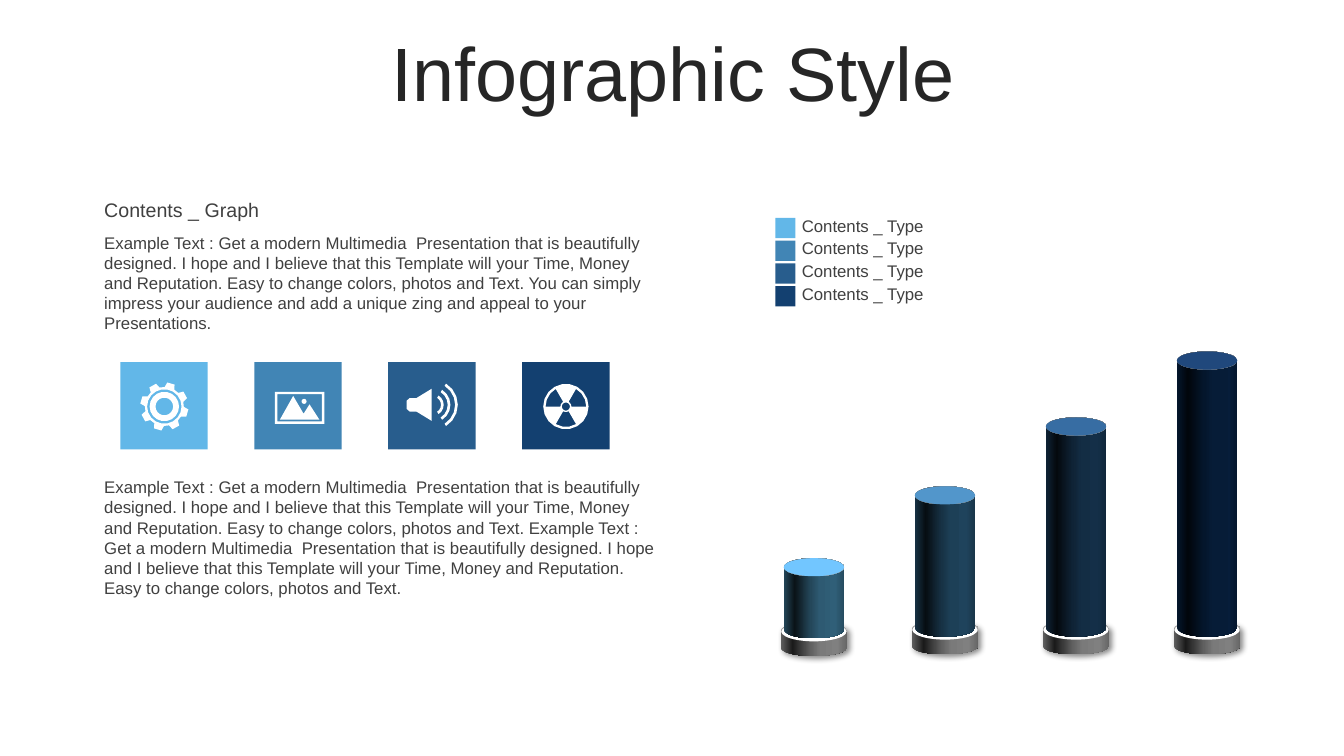
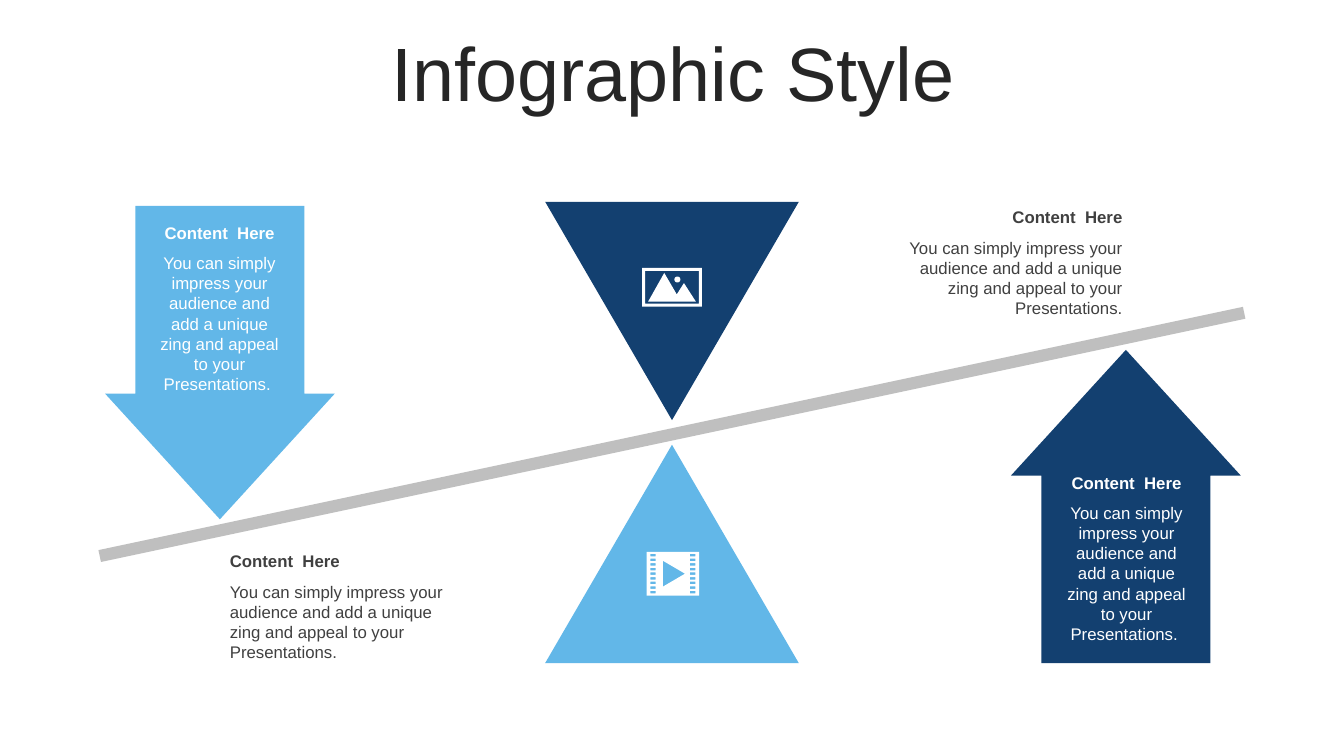
from collections.abc import Callable
from dataclasses import dataclass
from math import cos, radians, sin
from typing import Any, NamedTuple

from lxml import etree
from pptx import Presentation
from pptx.dml.color import RGBColor
from pptx.enum.shapes import MSO_SHAPE
from pptx.enum.text import MSO_ANCHOR, MSO_AUTO_SIZE, PP_ALIGN
from pptx.oxml.ns import qn
from pptx.util import Emu, Inches, Pt

RECT, OVAL, CAN = MSO_SHAPE.RECTANGLE, MSO_SHAPE.OVAL, MSO_SHAPE.CAN
TRIANGLE, DOWN_ARROW = MSO_SHAPE.ISOSCELES_TRIANGLE, MSO_SHAPE.DOWN_ARROW
LEFT, CENTER, RIGHT = PP_ALIGN.LEFT, PP_ALIGN.CENTER, PP_ALIGN.RIGHT
TOP, MIDDLE = MSO_ANCHOR.TOP, MSO_ANCHOR.MIDDLE
NO_FIT = MSO_AUTO_SIZE.NONE

WIDTH, HEIGHT = Inches(13.333), Inches(7.5)
GRID_COLUMNS = 160
UNIT = WIDTH / GRID_COLUMNS

Point = tuple[float, float]
Contour = list[Point]


@dataclass(frozen=True)
class Theme:
    font: str = "Arial"
    title: str = "262626"
    text: str = "404040"
    white: str = "FFFFFF"
    beam: str = "BFBFBF"
    base: str = "808080"
    blues: tuple[str, ...] = ("62B7E8", "4185B5", "285D8D", "134070")
    title_size: int = 54
    heading_size: int = 14
    body_size: int = 12


THEME = Theme()


class Box(NamedTuple):
    x: float
    y: float
    w: float
    h: float


class Column(NamedTuple):
    top: float
    foot: float
    lid: str
    body: str


class Tile(NamedTuple):
    icon: Callable[[float, float], list[Contour]]
    dx: float
    dy: float


class Caption(NamedTuple):
    x: float
    y: float
    w: float
    gap: float
    align: Any
    color: str
    text: str


TITLE = "Infographic Style"
TITLE_BOX = Box(4.2, 4.4, 151.9, 9.5)
PITCH = ("Example Text : Get a modern Multimedia  Presentation that is beautifully designed. "
         "I hope and I believe that this Template will your Time, Money and Reputation. "
         "Easy to change colors, photos and Text.")
APPEAL = "You can simply impress your audience and add a unique zing and appeal to your Presentations."
COLUMNS = (
    Column(66.45, 78.1, "72C6FF", "305F78"),
    Column(57.9, 77.9, "5296CB", "1F435C"),
    Column(49.7, 77.9, "376DA3", "142F48"),
    Column(41.85, 77.9, "20487C", "061D3A"),
)


def emu(n: float) -> Emu:
    return Emu(round(n * UNIT))


def place(box: Box) -> tuple[Emu, ...]:
    return tuple(emu(n) for n in box)


def apply(target: Any, values: dict[str, Any]) -> None:
    for name, value in values.items():
        setattr(target, name, value)


def paint(sp: Any, color: str) -> None:
    sp.shadow.inherit = False
    sp.fill.solid()
    sp.fill.fore_color.rgb = RGBColor.from_string(color)
    sp.line.fill.background()


def add_preset(s: Any, kind: Any, box: Box, color: str, rotation: float = 0,
               adjust: tuple[float, ...] = ()) -> Any:
    sp = s.shapes.add_shape(kind, *place(box))
    paint(sp, color)
    sp.rotation = rotation
    for i, value in enumerate(adjust):
        sp.adjustments[i] = value
    return sp


def add_outline(s: Any, contours: list[Contour], color: str) -> None:
    first, *rest = [[(emu(x), emu(y)) for x, y in c] for c in contours]
    builder = s.shapes.build_freeform(*first[0])
    builder.add_line_segments(first[1:])
    for c in rest:
        builder.move_to(*c[0])
        builder.add_line_segments(c[1:])
    paint(builder.convert_to_shape(), color)


def write(tf: Any, text: str, size: int, color: str, frame: dict[str, Any],
          paragraph: dict[str, Any], bold: bool = False) -> None:
    apply(tf, {"word_wrap": True, "auto_size": NO_FIT, **frame})
    p = tf.paragraphs[0]
    apply(p, paragraph)
    r = p.add_run()
    r.text = text
    apply(r.font, {"name": THEME.font, "size": Pt(size), "bold": bold})
    r.font.color.rgb = RGBColor.from_string(color)


def add_text(s: Any, box: Box, text: str, size: int = THEME.body_size,
             color: str = THEME.text, align: Any = LEFT, anchor: Any = TOP,
             bold: bool = False) -> None:
    tf = s.shapes.add_textbox(*place(box)).text_frame
    write(tf, text, size, color, {"vertical_anchor": anchor}, {"alignment": align}, bold)


def add_titled_slide(prs: Any) -> Any:
    s = prs.slides.add_slide(prs.slide_layouts[5])
    sp = s.shapes.title
    apply(sp, dict(zip(("left", "top", "width", "height"), place(TITLE_BOX))))
    write(sp.text_frame, TITLE, THEME.title_size, THEME.title, {"vertical_anchor": MIDDLE},
          {"alignment": CENTER, "line_spacing": 0.9, "space_before": Pt(10)})
    return s


def shade(color: str, share: float) -> str:
    return str(RGBColor(*(round(c * share) for c in RGBColor.from_string(color))))


def add_sheen(sp: Any, color: str) -> None:
    sp.fill.gradient()
    sp.fill.gradient_angle = 0
    stops = sp._element.spPr.find(qn("a:gradFill")).find(qn("a:gsLst"))
    for stop in list(stops):
        stops.remove(stop)
    for position, share in ((0, 0.75), (18, 0.2), (45, 0.75), (60, 0.95), (85, 1), (100, 0.8)):
        stop = etree.SubElement(stops, qn("a:gs"), pos=str(position * 1000))
        etree.SubElement(stop, qn("a:srgbClr"), val=shade(color, share))


def add_soft_shadow(sp: Any) -> None:
    effects = sp._element.spPr.find(qn("a:effectLst"))
    shadow = etree.SubElement(effects, qn("a:outerShdw"), blurRad=str(emu(0.7)),
                              dist=str(emu(0.4)), dir="2700000", rotWithShape="0")
    tint = etree.SubElement(shadow, qn("a:srgbClr"), val="000000")
    etree.SubElement(tint, qn("a:alpha"), val="45000")


def add_column(s: Any, cx: float, column: Column) -> None:
    base_w, base_h = 7.9, 4
    rim_w, rim_h = 7.75, 2.3
    body_w, lid_h = 7.2, 2.15
    base_top = column.foot - base_h
    body_bottom = base_top + 1.9
    base = add_preset(s, CAN, Box(cx - base_w / 2, base_top, base_w, base_h),
                      THEME.base, adjust=(0.5,))
    add_sheen(base, THEME.base)
    add_soft_shadow(base)
    add_preset(s, OVAL, Box(cx - rim_w / 2, base_top - 0.05, rim_w, rim_h), THEME.white)
    left = cx - body_w / 2
    body = add_preset(s, CAN, Box(left, column.top, body_w, body_bottom - column.top),
                      column.body, adjust=(lid_h / body_w,))
    add_sheen(body, column.body)
    add_preset(s, OVAL, Box(left, column.top, body_w, lid_h), column.lid)


def polar(cx: float, cy: float, radius: float, angle: float) -> Point:
    return cx + radius * cos(radians(angle)), cy + radius * sin(radians(angle))


def arc(cx: float, cy: float, radius: float, start: float, end: float) -> Contour:
    steps = round(abs(end - start) / 20)
    return [polar(cx, cy, radius, start + (end - start) * i / steps) for i in range(steps + 1)]


def circle(cx: float, cy: float, radius: float) -> Contour:
    return arc(cx, cy, radius, 0, 360)


def band(cx: float, cy: float, inner: float, outer: float, start: float, end: float) -> Contour:
    ring = arc(cx, cy, outer, start, end) + arc(cx, cy, inner, end, start)
    return ring + ring[:1]


def polygon(cx: float, cy: float, points: Contour, scale: float = 1) -> Contour:
    return [(cx + x * scale, cy + y * scale) for x, y in points + points[:1]]


def rectangle(cx: float, cy: float, w: float, h: float) -> Contour:
    x, y = w / 2, h / 2
    return polygon(cx, cy, [(-x, -y), (x, -y), (x, y), (-x, y)])


def gear_icon(cx: float, cy: float) -> list[Contour]:
    teeth, tip, root = 8, 2.88, 2.32
    rim = [polar(cx, cy, radius, -74 + 360 / teeth * i + turn)
           for i in range(teeth)
           for radius, turn in ((root, -15), (tip, -9), (tip, 9), (root, 15))]
    return [rim + rim[:1]] + [circle(cx, cy, radius) for radius in (2.05, 1.75, 1.05)]


def photo_icon(cx: float, cy: float, w: float = 5.88) -> list[Contour]:
    hills = [(-0.13, -0.24), (0.08, 0.12), (0.2, -0.07), (0.4, 0.24), (-0.4, 0.24)]
    return [rectangle(cx, cy, w, w * 0.65),
            rectangle(cx, cy, w * 0.9, w * 0.55),
            polygon(cx, cy, hills, w),
            circle(cx + w * 0.09, cy - w * 0.13, w * 0.05)]


def speaker_icon(cx: float, cy: float) -> list[Contour]:
    horn = [(-0.15, -1.9), (-0.15, 1.9), (-1.95, 0.8), (-2.75, 0.8), (-3.1, 0.5),
            (-3.1, -0.5), (-2.75, -0.8), (-1.95, -0.8)]
    waves = [band(cx, cy, radius - 0.32, radius, -58, 58) for radius in (1.3, 2.1, 2.98)]
    return [polygon(cx, cy, horn)] + waves


def trefoil_icon(cx: float, cy: float) -> list[Contour]:
    gaps = [band(cx, cy, 0.65, 2.42, start, start + 60) for start in (-180, -60, 60)]
    return [circle(cx, cy, 2.7), circle(cx, cy, 0.48)] + gaps


def film_icon(cx: float, cy: float) -> list[Contour]:
    rows, pitch = 9, 0.55
    holes = [rectangle(cx + side * 2.36, cy + (i - rows // 2) * pitch, 0.65, 0.3)
             for i in range(rows) for side in (-1, 1)]
    play = polygon(cx, cy, [(-1.2, -1.55), (-1.2, 1.55), (1.45, 0)])
    return [rectangle(cx, cy, 6.25, 5.2), play] + holes


def build_graph_slide(prs: Any) -> None:
    s = add_titled_slide(prs)
    for i, column in enumerate(COLUMNS):
        add_column(s, 96.9 + 15.6 * i, column)

    left, width = 11.23, 68.8
    add_text(s, Box(left, 23, width, 4.1), "Contents _ Graph", THEME.heading_size)
    add_text(s, Box(left, 27.07, width, 13.3), f"{PITCH} {APPEAL}")
    add_text(s, Box(left, 56.19, width, 15.7), f"{PITCH} {PITCH}")

    side = 10.4
    tiles = (Tile(gear_icon, 0.05, 0.1), Tile(photo_icon, 0.2, 0.25),
             Tile(speaker_icon, 0.1, -0.1), Tile(trefoil_icon, 0, 0.1))
    for i, (tile, color) in enumerate(zip(tiles, THEME.blues)):
        box = Box(14.32 + 15.95 * i, 43.1, side, side)
        add_preset(s, RECT, box, color)
        add_outline(s, tile.icon(box.x + side / 2 + tile.dx, box.y + side / 2 + tile.dy),
                    THEME.white)
        row = 2.71 * i
        add_preset(s, RECT, Box(92.3, 25.95 + row, 2.4, 2.4), color)
        add_text(s, Box(94.27, 25.03 + row, 17.2, 3.6), "Contents _ Type", anchor=MIDDLE)


def build_balance_slide(prs: Any) -> None:
    s = add_titled_slide(prs)
    light, dark = THEME.blues[0], THEME.blues[-1]
    arrow = (0.735, 0.547)
    add_preset(s, TRIANGLE, Box(64.9, 52.95, 30.2, 26), light)
    add_preset(s, DOWN_ARROW, Box(120.35, 41.65, 27.36, 37.3), dark, 180, arrow)
    add_preset(s, RECT, Box(10.35, 51, 139.3, 1.45), THEME.beam, 348)
    add_preset(s, DOWN_ARROW, Box(12.5, 24.52, 27.36, 37.3), light, adjust=arrow)
    add_preset(s, TRIANGLE, Box(64.9, 24.02, 30.2, 26), dark, 180)

    captions = (
        Caption(17.65, 25.9, 17, 3.6, CENTER, THEME.white, APPEAL + " "),
        Caption(125.62, 55.65, 17, 3.6, CENTER, THEME.white, APPEAL + " "),
        Caption(105.42, 24, 29.4, 3.7, RIGHT, THEME.text, APPEAL),
        Caption(26.18, 64.95, 29.4, 3.7, LEFT, THEME.text, APPEAL),
    )
    for c in captions:
        add_text(s, Box(c.x, c.y, c.w, 3.6), "Content  Here",
                 color=c.color, align=c.align, bold=True)
        height = 18.1 if c.align == CENTER else 10.9
        add_text(s, Box(c.x, c.y + c.gap, c.w, height), c.text, color=c.color, align=c.align)

    for icon in (film_icon(80.1, 68.3), photo_icon(80, 34.2, 7.1)):
        add_outline(s, icon, THEME.white)


def main() -> None:
    prs = Presentation()
    apply(prs, {"slide_width": WIDTH, "slide_height": HEIGHT})
    build_graph_slide(prs)
    build_balance_slide(prs)
    prs.save("out.pptx")


if __name__ == "__main__":
    main()
